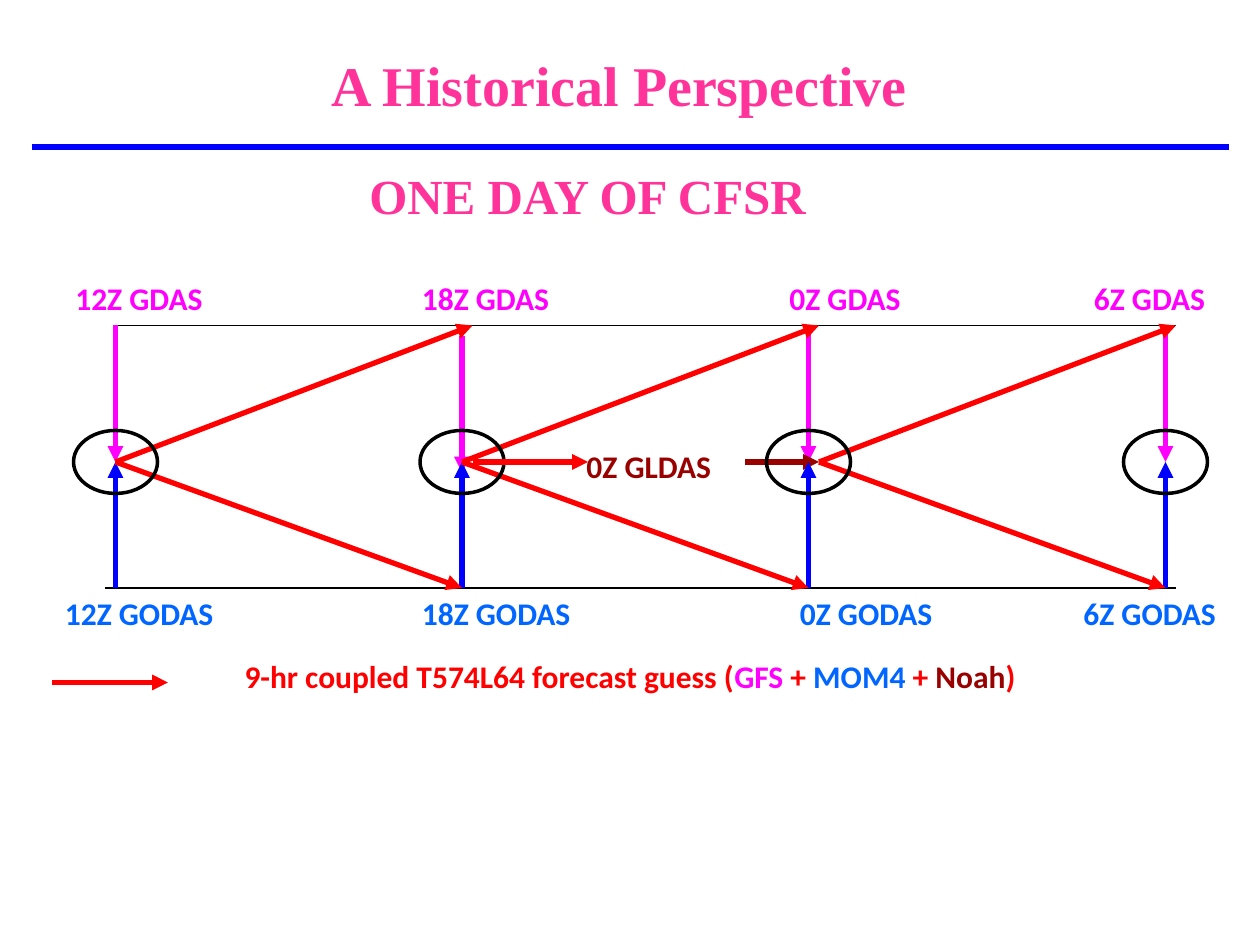
import pptx
import pptx.util
import pptx.dml.color
import pptx.enum.shapes
import pptx.enum.text
import lxml.etree
import pptx.oxml.ns

RGBColor = pptx.dml.color.RGBColor
PINK = RGBColor(0xFF, 0x33, 0x99)
MAGENTA = RGBColor(0xFF, 0x00, 0xFF)
BLUE = RGBColor(0x00, 0x00, 0xFF)
SKY = RGBColor(0x00, 0x66, 0xFF)
RED = RGBColor(0xFF, 0x00, 0x00)
MAROON = RGBColor(0x99, 0x00, 0x00)
BLACK = RGBColor(0x00, 0x00, 0x00)

deck = pptx.Presentation()
deck.slide_width = pptx.util.Inches(10)
deck.slide_height = pptx.util.Inches(7.5)
page = deck.slides.add_slide(deck.slide_layouts[6])
CELL = deck.slide_width // 120  # the page is a grid of 120 columns by 90 rows

TOP, MIDDLE, BOTTOM = 31, 44, 56
LABEL_ROW = 26
LABEL_HEIGHT = 4.8


def add_line(start, end, color, width=3, arrow=True):
    """Draw a line between two (column, row) points, with a head at its end."""
    line = page.shapes.add_connector(
        pptx.enum.shapes.MSO_CONNECTOR.STRAIGHT,
        *(round(CELL * place) for place in (*start, *end)))
    line.line.color.rgb = color
    line.line.width = pptx.util.Pt(width)
    if arrow:
        lxml.etree.SubElement(line.line._get_or_add_ln(),
                              pptx.oxml.ns.qn("a:tailEnd"), type="triangle")
    lxml.etree.SubElement(line._element.spPr, pptx.oxml.ns.qn("a:effectLst"))


def add_text(frame, pieces, size=18, font="Calibri", centered=False):
    """Write (text, colour) pieces in a box at frame, given in grid cells."""
    box = page.shapes.add_textbox(*(round(CELL * length) for length in frame))
    box.text_frame.word_wrap = True
    para = box.text_frame.paragraphs[0]
    para.font.name = font
    para.font.size = pptx.util.Pt(size)
    para.font.bold = True
    if centered:
        para.alignment = pptx.enum.text.PP_ALIGN.CENTER
    for text, color in pieces:
        span = para.add_run()
        span.text = text
        span.font.color.rgb = color
    return box


# Heading
add_line((3, 14), (117, 14), BLUE, 3.25, arrow=False)
title = add_text((5, 3, 108, 10), [("A Historical Perspective", PINK)],
                 32, "Times New Roman", centered=True)
title.text_frame.vertical_anchor = pptx.enum.text.MSO_ANCHOR.MIDDLE
add_text((34, 15.2, 55, 6.8), [("ONE DAY OF CFSR", PINK)], 28, "Times New Roman")

# Time axes of the atmosphere (top) and the ocean (bottom)
add_line((11, TOP), (112, TOP), BLACK, 0.75, arrow=False)
add_line((10, BOTTOM), (112, BOTTOM), BLACK, 0.75, arrow=False)

# Analysis times: hour, column, label columns and widths, rows of the GDAS arrow
cycles = [
    ("12Z", 11, (6, 19), (5, 20), (TOP, MIDDLE)),
    ("18Z", 44, (39, 15), (39, 20), (TOP + 1, MIDDLE + 1)),
    ("0Z", 77, (74, 14), (75, 20), (TOP, MIDDLE)),
    ("6Z", 111, (103, 17), (102, 20), (TOP, MIDDLE)),
]
for hour, column, (gdas, gdas_width), (godas, godas_width), (start, end) in cycles:
    add_text((gdas, LABEL_ROW, gdas_width, LABEL_HEIGHT), [(f"{hour} GDAS", MAGENTA)])
    add_text((godas, BOTTOM, godas_width, LABEL_HEIGHT), [(f"{hour} GODAS", SKY)])
    add_line((column, start), (column, end), MAGENTA)

# Land analysis
add_text((54, 42, 20, LABEL_HEIGHT), [(" 0Z GLDAS", MAROON)])
add_line((71, MIDDLE), (78, MIDDLE), MAROON)

for _, column, *_ in cycles:
    add_line((column, BOTTOM), (column, MIDDLE), BLUE)

# Forecasts fan out from each analysis to the next one
for origin, target in ((11, 44), (44, 77), (78, 111)):
    add_line((origin, MIDDLE), (target + 1, TOP), RED)
    add_line((origin, MIDDLE), (target, BOTTOM), RED)

for _, column, *_ in cycles:
    ring = page.shapes.add_shape(
        pptx.enum.shapes.MSO_SHAPE.OVAL,
        CELL * (column - 4), CELL * (MIDDLE - 3), CELL * 8, CELL * 6)
    ring.shadow.inherit = False
    ring.fill.background()
    ring.line.color.rgb = BLACK
    ring.line.width = pptx.util.Pt(2)

add_line((45, MIDDLE), (56, MIDDLE), RED)

# Key
add_line((5, 65), (16, 65), RED)
add_text((12, 62, 96, LABEL_HEIGHT), [
    ("9-hr coupled T574L64 forecast guess (", RED), ("GFS ", MAGENTA), ("+ ", RED),
    ("MOM4 ", SKY), ("+ ", RED), ("Noah", MAROON), (")", RED)], centered=True)

deck.save("out.pptx")
